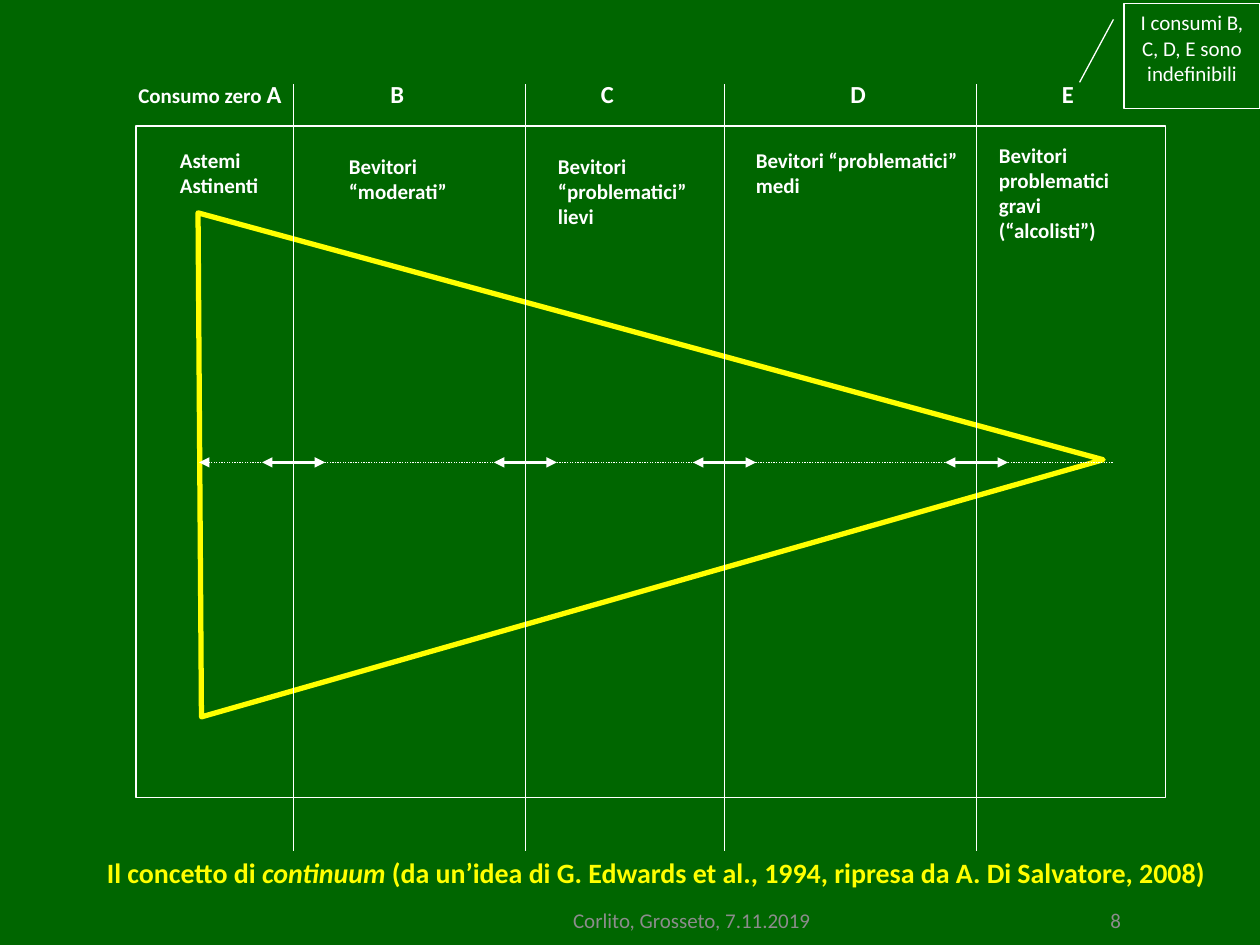
from pptx import Presentation
from pptx.dml.color import RGBColor
from pptx.enum.dml import MSO_LINE as Dash
from pptx.enum.shapes import MSO_CONNECTOR as Conn, MSO_SHAPE as Geo
from pptx.enum.text import MSO_ANCHOR as Anchor, MSO_AUTO_SIZE as Auto, PP_ALIGN as Align
from pptx.oxml.ns import qn
from pptx.util import Inches, Pt
from lxml.etree import SubElement as Sub

WHITE, YELLOW, GREEN, GRAY = "FFFFFF", "FFFF00", "006600", "8C8C8C"
TOP, END, MID = 0.67, 6.75, 3.67
BOUNDS = [2.33, 4.17, 5.75, 7.75]
HEADS = [("B", 3, 0.33, False), ("C", 4.67, 0.33, True),
         ("D", 6.65, 0.35, True), ("E", 8.33, 0.33, False)]
GROUPS = [
    (["Astemi", "Astinenti"], (1.33, 1.12, 1, 0.5), True),
    (["Bevitori “moderati”"], (2.67, 1.17, 1.08, 0.5), True),
    (["Bevitori “problematici”", "lievi"], (4.33, 1.17, 1.42, 0.7), True),
    (["Bevitori “problematici”", "medi"], (5.9, 1.12, 1.9, 0.5), False),
    (["Bevitori problematici gravi (“alcolisti”)"], (7.83, 1.08, 1.25, 0.9), True),
]


def color(code):
    """Turn a hex string into a colour."""
    return RGBColor.from_string(code)


def put_run(para, words, size=12, hue=WHITE, bold=True, slant=False):
    """Add one styled run to a paragraph."""
    run = para.add_run()
    run.text = words
    font = run.font
    font.name, font.size = "Calibri", Pt(size)
    font.bold, font.italic = bold, slant
    font.color.rgb = color(hue)


def add_text(slide, box, paras, wrap=True, align=Align.LEFT, anchor=Anchor.TOP, grow=True):
    """Add a text box from paragraphs, each a list of run options."""
    frame = slide.shapes.add_textbox(*map(Inches, box)).text_frame
    frame.word_wrap, frame.vertical_anchor = wrap, anchor
    frame.auto_size = Auto.SHAPE_TO_FIT_TEXT if grow else Auto.NONE
    for i, runs in enumerate(paras):
        para = frame.add_paragraph() if i else frame.paragraphs[0]
        para.alignment = align
        for run in runs:
            put_run(para, **run)


def add_shape(slide, geo, box, hue=WHITE, width=0.75, adjust=()):
    """Add an unfilled outlined shape."""
    shape = slide.shapes.add_shape(geo, *map(Inches, box))
    shape.shadow.inherit = False
    shape.fill.background()
    shape.line.color.rgb, shape.line.width = color(hue), Pt(width)
    for i, value in enumerate(adjust):
        shape.adjustments[i] = value
    return shape


def add_line(slide, start, stop, width=0.75, dash=None, arrow=False):
    """Add a white straight line, with an arrowhead at its end if asked."""
    link = slide.shapes.add_connector(Conn.STRAIGHT, *map(Inches, start + stop))
    link.line.color.rgb, link.line.width = color(WHITE), Pt(width)
    if dash:
        link.line.dash_style = dash
    if arrow:
        Sub(link.line._get_or_add_ln(), qn("a:tailEnd"), type="triangle")
    Sub(link._element.spPr, qn("a:effectLst"))


def add_chart_lines(slide):
    """Draw the frame, the triangle, the dividers and the axis arrows."""
    cone = add_shape(slide, Geo.ISOSCELES_TRIANGLE, (3.17, 0.08, 4, 7.17), YELLOW, 3, [0.502])
    cone.rotation = 89.6
    add_shape(slide, Geo.RECTANGLE, (1.08, 1, 8.17, 5.33))
    for x in BOUNDS:
        add_line(slide, (x, TOP), (x, END))
    add_line(slide, (8.83, MID), (1.58, MID), dash=Dash.ROUND_DOT, arrow=True)
    for x in BOUNDS:
        for step in (0.25, -0.25):
            add_line(slide, (x, MID), (x + step, MID), 1.5, arrow=True)


def add_labels(slide):
    """Write the column letters and the drinker groups."""
    add_text(slide, (1, 0.58, 1.5, 0.33), [[dict(words="Consumo zero "), dict(words="A", size=14)]])
    for name, x, width, wrap in HEADS:
        add_text(slide, (x, 0.58, width, 0.33), [[dict(words=name, size=14)]], wrap)
    for lines, box, wrap in GROUPS:
        add_text(slide, box, [[dict(words=line)] for line in lines], wrap)


def add_note(slide):
    """Add the callout in the top right corner."""
    note = add_shape(slide, Geo.LINE_CALLOUT_1, (8.92, 0.03, 1.08, 0.83),
                     adjust=[0.15, -0.077, 0.752, -0.326])
    frame = note.text_frame
    frame.word_wrap, frame.vertical_anchor = True, Anchor.TOP
    para = frame.paragraphs[0]
    para.alignment = Align.CENTER
    put_run(para, "I consumi B, C, D, E sono indefinibili", bold=False)


def add_foot(slide):
    """Write the caption, the slide number and the footer."""
    look = dict(size=16, hue=YELLOW)
    add_text(slide, (0.75, 6.74, 9, 0.37), [[
        dict(words="Il concetto di ", **look),
        dict(words="continuum ", slant=True, **look),
        dict(words="(da un’idea di G. Edwards et al., 1994, ripresa da A. Di Salvatore, 2008)", **look),
    ]])
    for words, x, width, align in [("8", 7.83, 2.05, Align.CENTER),
                                   ("Corlito, Grosseto, 7.11.2019", 4.45, 2.33, Align.LEFT)]:
        add_text(slide, (x, 7.1, width, 0.4), [[dict(words=words, hue=GRAY, bold=False)]],
                 align=align, anchor=Anchor.MIDDLE, grow=False)


def main():
    """Build the slide and save it."""
    deck = Presentation()
    deck.slide_width, deck.slide_height = Inches(10), Inches(7.5)
    slide = deck.slides.add_slide(deck.slide_layouts[6])
    fill = slide.background.fill
    fill.solid()
    fill.fore_color.rgb = color(GREEN)
    add_chart_lines(slide)
    add_labels(slide)
    add_note(slide)
    add_foot(slide)
    deck.save("out.pptx")


if __name__ == "__main__":
    main()
